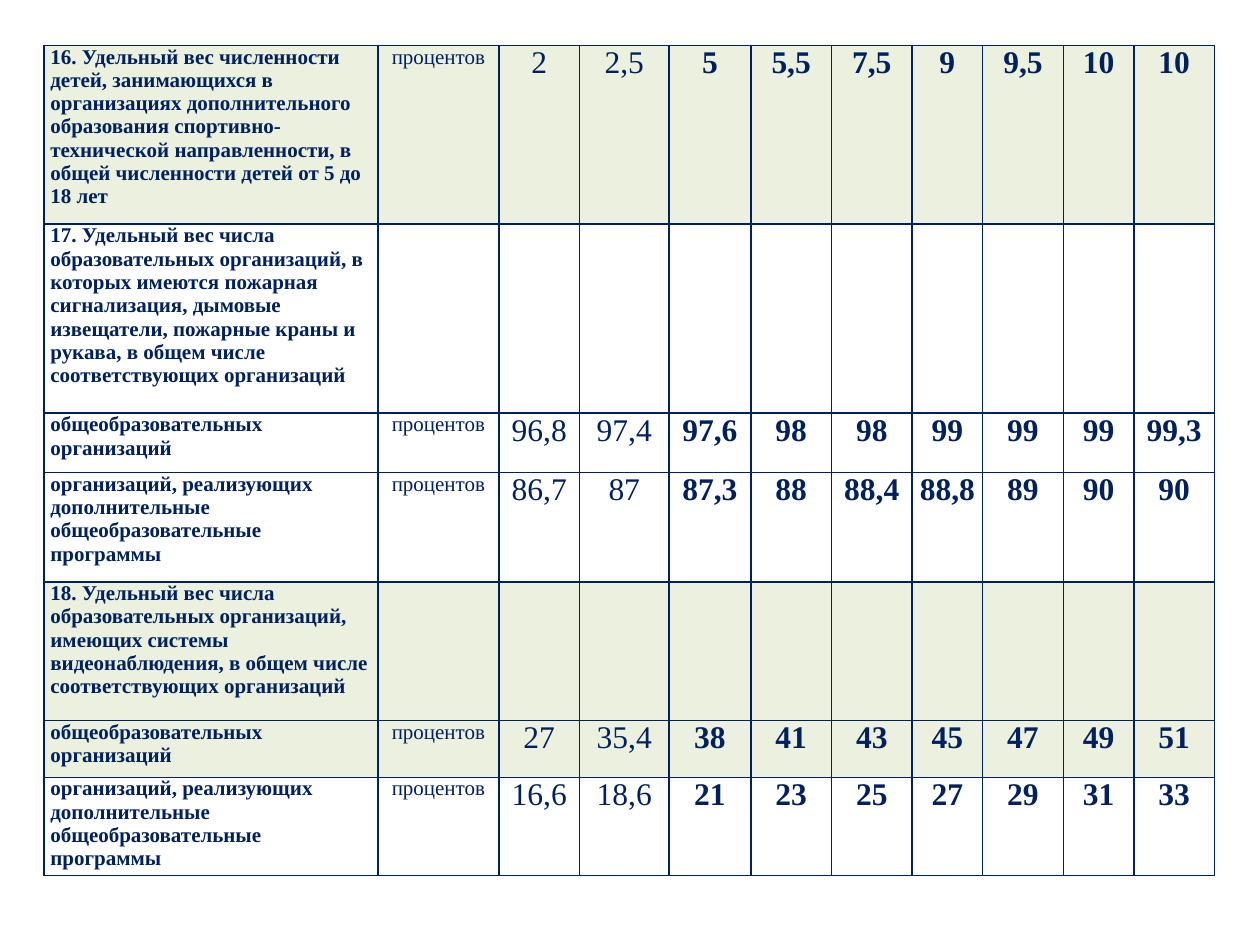
"""Build a slide with a table of education indicators 16 to 18."""
from lxml.etree import SubElement
from pptx import Presentation
from pptx.dml.color import RGBColor
from pptx.enum.text import PP_ALIGN
from pptx.oxml.ns import qn
from pptx.util import Inches, Pt

NAVY = RGBColor(0x00, 0x20, 0x60)
GREEN = RGBColor(0xEB, 0xF1, 0xDE)
FONT = "Times New Roman"
UNIT = "процентов"
GENERAL = "общеобразовательных организаций"
EXTRA = "организаций, реализующих дополнительные общеобразовательные программы"

COL_WIDTHS = [2.65, 0.96, 0.64, 0.71, 0.65, 0.64, 0.64, 0.56, 0.64, 0.56, 0.64]
ROWS = [
    (1.42, GREEN, "16. Удельный вес численности детей, занимающихся в организациях "
     "дополнительного образования спортивно-технической направленности, "
     "в общей численности детей от 5 до 18 лет",
     ["2", "2,5", "5", "5,5", "7,5", "9", "9,5", "10", "10"]),
    (1.5, None, "17. Удельный вес числа образовательных организаций, в которых имеются "
     "пожарная сигнализация, дымовые извещатели, пожарные краны и рукава, "
     "в общем числе соответствующих организаций", []),
    (0.47, None, GENERAL,
     ["96,8", "97,4", "97,6", "98", "98", "99", "99", "99", "99,3"]),
    (0.87, None, EXTRA,
     ["86,7", "87", "87,3", "88", "88,4", "88,8", "89", "90", "90"]),
    (1.1, GREEN, "18. Удельный вес числа образовательных организаций, имеющих системы "
     "видеонаблюдения, в общем числе соответствующих организаций", []),
    (0.45, GREEN, GENERAL,
     ["27", "35,4", "38", "41", "43", "45", "47", "49", "51"]),
    (0.78, None, EXTRA,
     ["16,6", "18,6", "21", "23", "25", "27", "29", "31", "33"]),
]


def add_borders(cell):
    tc_pr = cell._tc.get_or_add_tcPr()
    for i, side in enumerate(("lnL", "lnR", "lnT", "lnB")):
        ln = tc_pr.makeelement(qn(f"a:{side}"), {"w": str(Pt(1))})
        fill = SubElement(ln, qn("a:solidFill"))
        SubElement(fill, qn("a:srgbClr"), {"val": str(NAVY)})
        tc_pr.insert(i, ln)


def format_cell(cell, color):
    cell.margin_left = cell.margin_right = Inches(0.05)
    cell.margin_top = cell.margin_bottom = 0
    if color is None:
        cell.fill.background()
    else:
        cell.fill.solid()
        cell.fill.fore_color.rgb = color
    add_borders(cell)


def write_cell(cell, text, col):
    p = cell.text_frame.paragraphs[0]
    p.alignment = PP_ALIGN.CENTER if col else PP_ALIGN.LEFT
    r = p.add_run()
    r.text = text
    r.font.name = FONT
    r.font.size = Pt(12 if col < 2 else 18)
    r.font.bold = col == 0 or col > 3
    r.font.color.rgb = NAVY


def main():
    prs = Presentation()
    prs.slide_width, prs.slide_height = Inches(10), Inches(7.5)
    s = prs.slides.add_slide(prs.slide_layouts[6])
    height = sum(row[0] for row in ROWS)
    table = s.shapes.add_table(len(ROWS), len(COL_WIDTHS), Inches(0.35), Inches(0.36),
                               Inches(sum(COL_WIDTHS)), Inches(height)).table
    table.first_row = table.horz_banding = False
    for column, width in zip(table.columns, COL_WIDTHS):
        column.width = Inches(width)
    for row, (row_height, color, label, values) in zip(table.rows, ROWS):
        row.height = Inches(row_height)
        for cell in row.cells:
            format_cell(cell, color)
        texts = [label, UNIT, *values] if values else [label]
        for col, text in enumerate(texts):
            write_cell(row.cells[col], text, col)
    prs.save("out.pptx")


if __name__ == "__main__":
    main()
